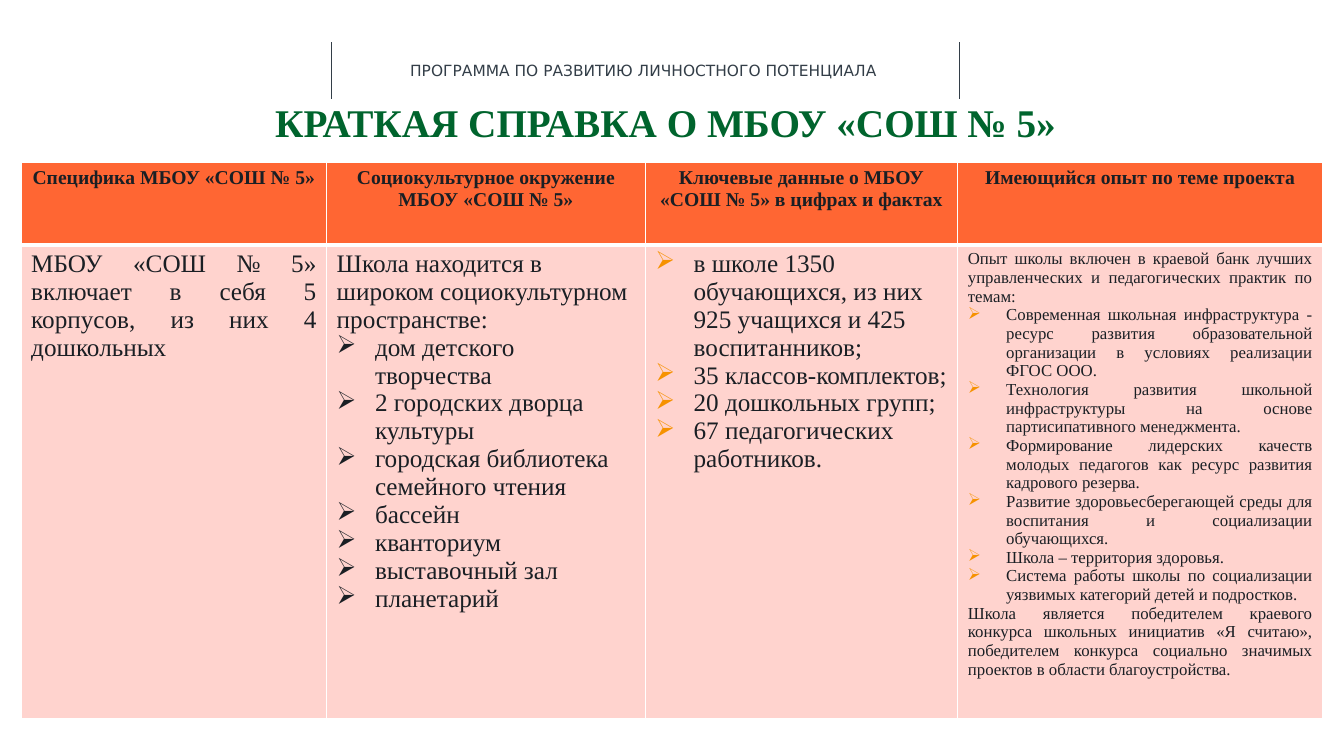
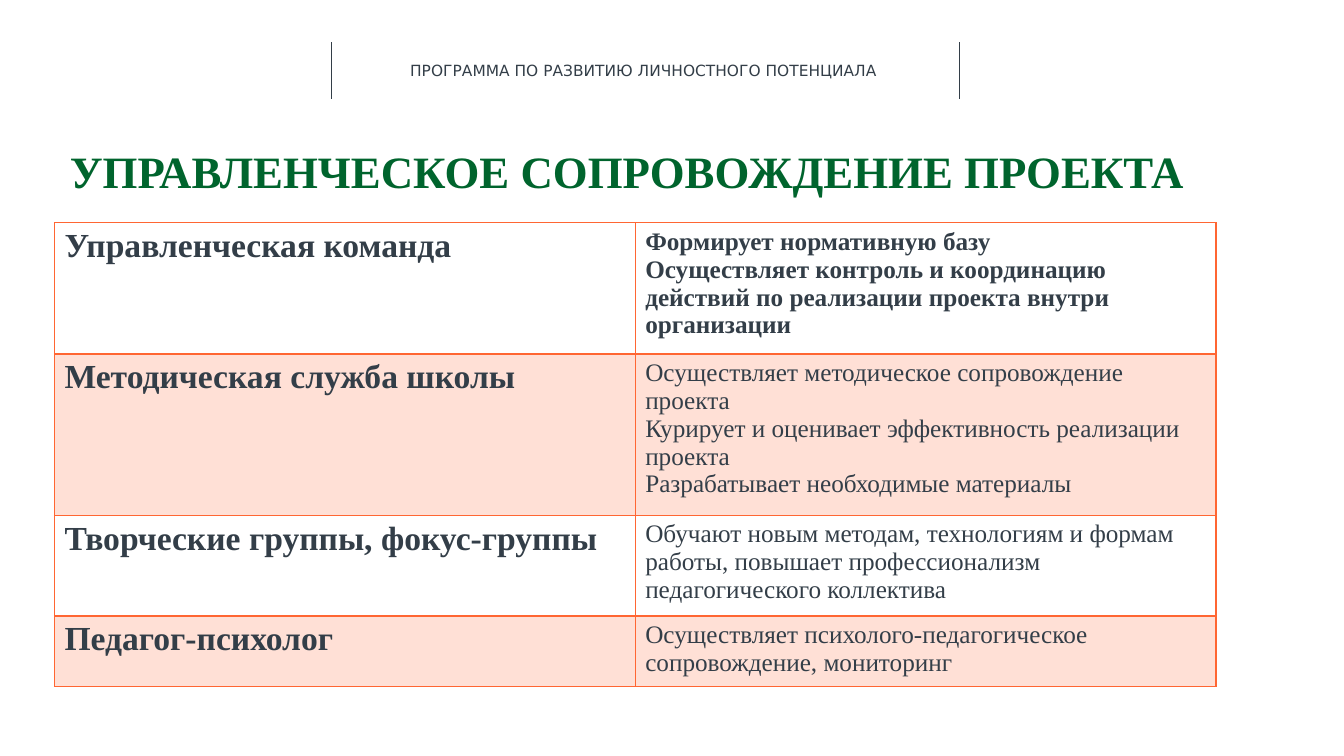
"""Builds two slides about a school: a brief profile and the project's management support."""
from dataclasses import dataclass

from lxml import etree
from pptx import Presentation
from pptx.dml.color import RGBColor
from pptx.enum.shapes import MSO_CONNECTOR
from pptx.enum.text import MSO_ANCHOR, PP_ALIGN
from pptx.oxml.ns import qn
from pptx.util import Inches, Pt

STRAIGHT = MSO_CONNECTOR.STRAIGHT
MIDDLE = MSO_ANCHOR.MIDDLE
LEFT, CENTER, JUSTIFY = PP_ALIGN.LEFT, PP_ALIGN.CENTER, PP_ALIGN.JUSTIFY
TITLE_ONLY = 5

SERIF, SANS = "Times New Roman", "DejaVu Sans"
GREEN, SLATE, INK = "00642D", "333E48", "1A1F24"
ORANGE, AMBER, WHITE = "FF6633", "F69200", "FFFFFF"
PINK, PEACH = "FFD3CE", "FFE0D6"
PROGRAMME = "ПРОГРАММА ПО РАЗВИТИЮ ЛИЧНОСТНОГО ПОТЕНЦИАЛА"


def rgb(value):
    return RGBColor.from_string(value)


@dataclass
class Entry:
    """A table cell's lines, with the first and last bulleted line and the look of the text."""
    lines: list
    size: int
    color: str
    bold: bool = False
    align: PP_ALIGN = LEFT
    fill: str = ""
    bullets: range = range(0)
    bullet_color: str = ""


class Deck:
    """Holds the presentation style and the current slide."""

    def __init__(self):
        self.prs = Presentation()
        self.prs.slide_width, self.prs.slide_height = Inches(13.33), Inches(7.5)
        self.slide = None

    def new_slide(self):
        self.slide = self.prs.slides.add_slide(self.prs.slide_layouts[TITLE_ONLY])
        for x in (3.29, 9.52):
            self.rule(x, 0.42, 0.98)
        programme = self.slide.shapes.add_textbox(
            Inches(3.97), Inches(0.56), Inches(4.87), Inches(0.29)).text_frame
        programme.word_wrap = True
        programme.text = PROGRAMME
        self.style(programme.paragraphs[0], 11, SLATE, font=SANS)

    def style(self, paragraph, size, color, bold=False, align=LEFT, font=SERIF):
        paragraph.alignment = align
        for run in paragraph.runs:
            run.font.name, run.font.size, run.font.bold = font, Pt(size), bold
            run.font.color.rgb = rgb(color)

    def rule(self, x, top, bottom):
        line = self.slide.shapes.add_connector(
            STRAIGHT, Inches(x), Inches(top), Inches(x), Inches(bottom))
        line.line.color.rgb = rgb(SLATE)
        line.line.width = Pt(0.5)
        etree.SubElement(line._element.spPr, qn("a:effectLst"))

    def title(self, text, left, top, width, height, size):
        heading = self.slide.shapes.title
        heading.left, heading.top = Inches(left), Inches(top)
        heading.width, heading.height = Inches(width), Inches(height)
        frame = heading.text_frame
        frame.margin_left = frame.margin_right = frame.margin_top = frame.margin_bottom = 0
        frame.vertical_anchor = MIDDLE
        frame.word_wrap = True
        frame.text = text
        frame.paragraphs[0].line_spacing = 0.9
        self.style(frame.paragraphs[0], size, GREEN, True, CENTER)

    def bullet(self, paragraph, color):
        props = paragraph._p.get_or_add_pPr()
        props.set("marL", str(Inches(0.38)))
        props.set("indent", str(-Inches(0.38)))
        if color:
            tint = etree.SubElement(props, qn("a:buClr"))
            etree.SubElement(tint, qn("a:srgbClr"), val=color)
        etree.SubElement(props, qn("a:buChar"), char="➢")

    def borders(self, cell, color, top, bottom):
        props = cell._tc.get_or_add_tcPr()
        for side, width in (("L", 1), ("R", 1), ("T", top), ("B", bottom)):
            line = etree.SubElement(props, qn(f"a:ln{side}"), w=str(Pt(width)))
            paint = etree.SubElement(line, qn("a:solidFill"))
            etree.SubElement(paint, qn("a:srgbClr"), val=color)

    def fill_cell(self, cell, entry):
        if entry.fill:
            cell.fill.solid()
            cell.fill.fore_color.rgb = rgb(entry.fill)
        else:
            cell.fill.background()
        cell.text_frame.text = "\n".join(entry.lines)
        for number, paragraph in enumerate(cell.text_frame.paragraphs):
            if number in entry.bullets:
                self.bullet(paragraph, entry.bullet_color)
            self.style(paragraph, entry.size, entry.color, entry.bold, entry.align)

    def table(self, left, top, widths, heights, rows, border, head_rule):
        table = self.slide.shapes.add_table(
            len(heights), len(widths), Inches(left), Inches(top),
            Inches(sum(widths)), Inches(sum(heights))).table
        table.first_row = table.horz_banding = False
        for column, width in zip(table.columns, widths):
            column.width = Inches(width)
        for r, (height, entries) in enumerate(zip(heights, rows)):
            table.rows[r].height = Inches(height)
            for c, entry in enumerate(entries):
                cell = table.cell(r, c)
                self.borders(cell, border, head_rule if r == 1 else 1,
                             head_rule if r == 0 else 1)
                self.fill_cell(cell, entry)


def school_profile(deck):
    deck.new_slide()
    deck.title("КРАТКАЯ СПРАВКА О МБОУ «СОШ № 5»", 0.43, 1.03, 12.34, 0.42, 28)
    headings = [
        "Специфика МБОУ «СОШ № 5»",
        "Социокультурное окружение МБОУ «СОШ № 5»",
        "Ключевые данные о МБОУ «СОШ № 5» в цифрах и фактах",
        "Имеющийся опыт по теме проекта",
    ]
    specifics = ["МБОУ «СОШ № 5» включает в себя 5 корпусов, из них 4 дошкольных"]
    surroundings = [
        "Школа находится в широком социокультурном пространстве:",
        "дом детского творчества",
        "2 городских дворца культуры",
        "городская библиотека семейного чтения",
        "бассейн",
        "кванториум",
        "выставочный зал",
        "планетарий",
    ]
    key_data = [
        "в школе 1350 обучающихся, из них 925 учащихся и 425 воспитанников;",
        "35 классов-комплектов;",
        "20 дошкольных групп;",
        "67 педагогических работников.",
    ]
    experience = [
        "Опыт школы включен в краевой банк лучших управленческих и педагогических "
        "практик по темам:",
        "Современная школьная инфраструктура - ресурс развития образовательной "
        "организации в условиях реализации ФГОС ООО.",
        "Технология развития школьной инфраструктуры на основе партисипативного "
        "менеджмента.",
        "Формирование лидерских качеств молодых педагогов как ресурс развития "
        "кадрового резерва.",
        "Развитие здоровьесберегающей среды для воспитания и социализации обучающихся.",
        "Школа – территория здоровья.",
        "Система работы школы по социализации уязвимых категорий детей и подростков.",
        "Школа является победителем краевого конкурса школьных инициатив «Я считаю», "
        "победителем конкурса социально значимых проектов в области благоустройства.",
    ]
    rows = [
        [Entry([heading], 14, INK, True, CENTER, ORANGE) for heading in headings],
        [
            Entry(specifics, 18, INK, align=JUSTIFY, fill=PINK),
            Entry(surroundings, 18, INK, fill=PINK, bullets=range(1, 8)),
            Entry(key_data, 18, INK, fill=PINK, bullets=range(4), bullet_color=AMBER),
            Entry(experience, 12, INK, align=JUSTIFY, fill=PINK, bullets=range(1, 7),
                  bullet_color=AMBER),
        ],
    ]
    deck.table(0.21, 1.61, [3.03, 3.16, 3.1, 3.62], [0.82, 4.67], rows, WHITE, 3)


def management_support(deck):
    deck.new_slide()
    deck.title("УПРАВЛЕНЧЕСКОЕ СОПРОВОЖДЕНИЕ ПРОЕКТА", 0, 1.49, 12.44, 0.48, 32)
    duties = {
        "Управленческая команда": [
            "Формирует нормативную базу",
            "Осуществляет контроль и координацию действий по реализации проекта внутри "
            "организации",
        ],
        "Методическая служба школы": [
            "Осуществляет методическое сопровождение проекта",
            "Курирует и оценивает эффективность реализации проекта",
            "Разрабатывает необходимые материалы",
        ],
        "Творческие группы, фокус-группы": [
            "Обучают новым методам, технологиям и формам работы, повышает "
            "профессионализм педагогического коллектива",
        ],
        "Педагог-психолог": [
            "Осуществляет психолого-педагогическое сопровождение, мониторинг",
        ],
    }
    rows = []
    for number, (team, tasks) in enumerate(duties.items()):
        band = PEACH if number % 2 else ""
        rows.append([Entry([team], 24, SLATE, True, fill=band),
                     Entry(tasks, 18, SLATE, number == 0, fill=band)])
    deck.table(0.54, 2.21, [5.76, 5.76], [1.3, 1.6, 1, 0.7], rows, ORANGE, 2)


def main():
    deck = Deck()
    school_profile(deck)
    management_support(deck)
    deck.prs.save("out.pptx")


if __name__ == "__main__":
    main()
